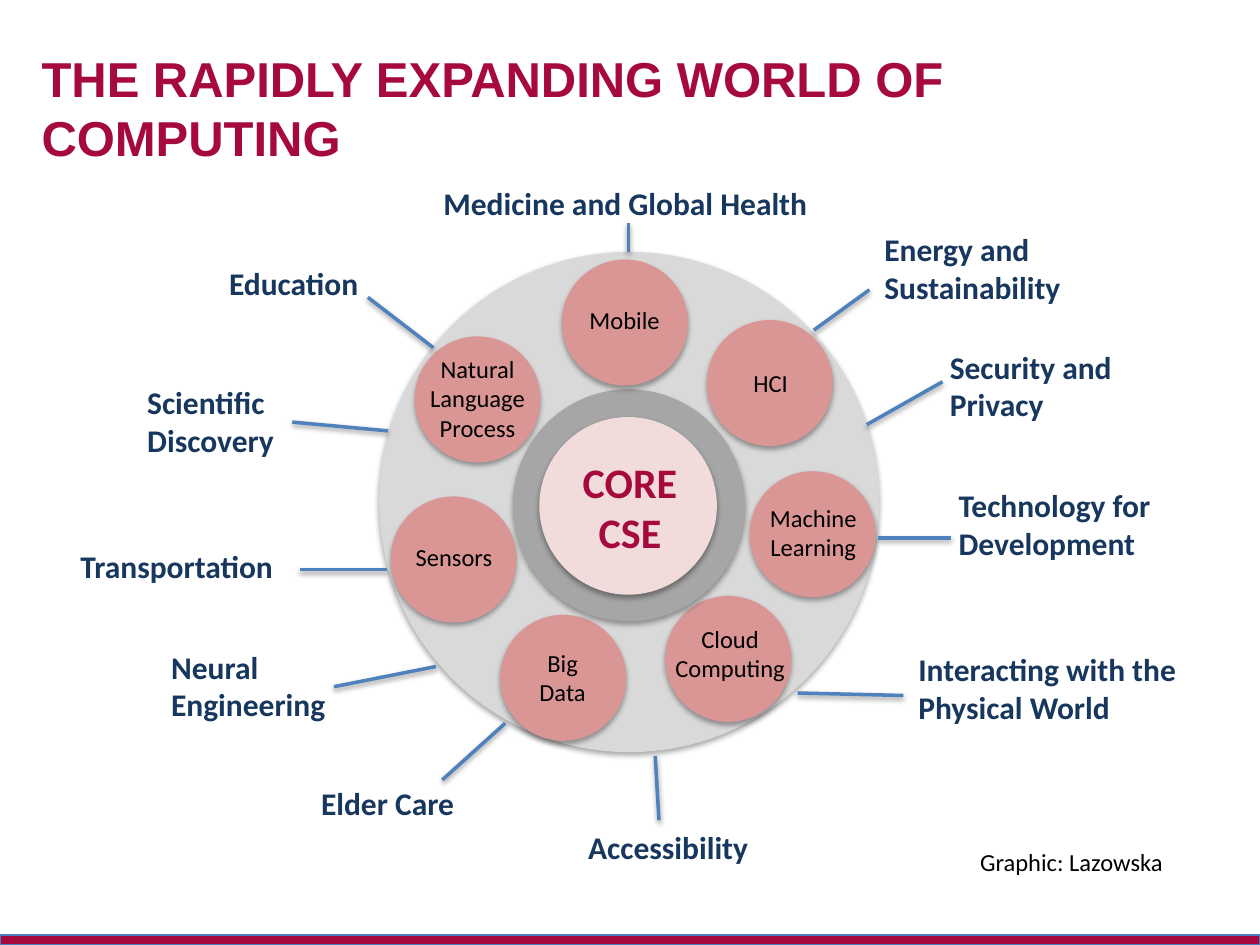
from typing import NamedTuple

from lxml.etree import SubElement
from pptx import Presentation
from pptx.dml.color import RGBColor
from pptx.enum.shapes import MSO_CONNECTOR, MSO_SHAPE
from pptx.enum.text import MSO_ANCHOR, MSO_AUTO_SIZE, PP_ALIGN
from pptx.oxml.ns import qn
from pptx.util import Pt

SCALE = 9144
CRIMSON, NAVY, BLACK = "A6093D", "17375E", "000000"
ROSE, BLUE = "D99694", "4F81BD"
LEFT, MID = PP_ALIGN.LEFT, PP_ALIGN.CENTER


class Disc(NamedTuple):
    x: int
    y: int
    size: int = 100
    fill: str = ROSE


class Style(NamedTuple):
    size: int
    color: str
    bold: bool = False
    font: str = "Calibri"


class Note(NamedTuple):
    x: int
    y: int
    w: int
    h: int
    text: str
    align: PP_ALIGN = LEFT
    wrap: bool = True


class Spoke(NamedTuple):
    x1: int
    y1: int
    x2: int
    y2: int


HEAD = Style(28, CRIMSON, True, "Arial")
CORE = Style(24, CRIMSON, True)
FIELD = Style(18, NAVY, True)
TOPIC = Style(14, BLACK)

DISCS = [
    Disc(301, 200, 397, "D9D9D9"),
    Disc(561, 254),
    Disc(595, 374),
    Disc(528, 473),
    Disc(329, 267),
    Disc(310, 394),
    Disc(397, 488),
    Disc(407, 309, 184, "A6A6A6"),
    Disc(428, 331, 141, "F2DCDB"),
    Disc(446, 206),
]

NOTES = {
    CORE: [Note(443, 357, 114, 91, "CORE\nCSE", MID)],
    TOPIC: [
        Note(768, 667, 168, 34, "Graphic: Lazowska", wrap=False),
        Note(458, 237, 81, 34, "Mobile"),
        Note(588, 287, 81, 34, "HCI"),
        Note(594, 394, 103, 57, "Machine Learning", MID),
        Note(521, 490, 117, 57, "Cloud\nComputing", MID),
        Note(406, 509, 81, 57, "Big Data", MID),
        Note(328, 276, 102, 81, "Natural Language Process", MID),
        Note(320, 425, 81, 34, "Sensors"),
    ],
    FIELD: [
        Note(342, 141, 341, 40, "Medicine and Global Health"),
        Note(692, 178, 166, 71, "Energy and\nSustainability"),
        Note(744, 271, 166, 71, "Security and\nPrivacy"),
        Note(751, 381, 197, 71, "Technology for\nDevelopment"),
        Note(719, 511, 247, 71, "Interacting with the Physical World"),
        Note(457, 652, 166, 40, "Accessibility"),
        Note(245, 617, 166, 40, "Elder Care"),
        Note(126, 509, 166, 71, "Neural\nEngineering"),
        Note(54, 429, 177, 40, "Transportation"),
        Note(107, 299, 132, 71, "Scientific Discovery"),
        Note(172, 205, 170, 40, "Education"),
    ],
}

SPOKES = [
    Spoke(292, 236, 344, 276),
    Spoke(308, 342, 232, 335),
    Spoke(307, 452, 238, 452),
    Spoke(346, 529, 265, 545),
    Spoke(401, 574, 351, 619),
    Spoke(520, 600, 523, 651),
    Spoke(633, 550, 717, 552),
    Spoke(697, 427, 755, 427),
    Spoke(688, 337, 748, 303),
    Spoke(646, 262, 690, 230),
    Spoke(499, 200, 499, 177),
]


def px(*vals: int) -> list[int]:
    return [val * SCALE for val in vals]


def rgb(code: str) -> RGBColor:
    return RGBColor.from_string(code)


def shade(shape, alpha: int, dist: float) -> None:
    group = SubElement(shape._element.spPr, qn("a:effectLst"))
    outer = SubElement(group, qn("a:outerShdw"), blurRad=str(Pt(3.1)),
                       dist=str(Pt(dist)), dir="5400000", rotWithShape="0")
    color = SubElement(outer, qn("a:srgbClr"), val=BLACK)
    SubElement(color, qn("a:alpha"), val=str(alpha * 1000))


def write(frame, text: str, style: Style, align: PP_ALIGN) -> None:
    frame.text = text
    for para in frame.paragraphs:
        para.alignment = align
        for run in para.runs:
            font = run.font
            font.name, font.size, font.bold = style.font, Pt(style.size), style.bold
            font.color.rgb = rgb(style.color)


def add_disc(slide, disc: Disc) -> None:
    shape = slide.shapes.add_shape(
        MSO_SHAPE.OVAL, *px(disc.x, disc.y, disc.size, disc.size))
    shape.fill.solid()
    shape.fill.fore_color.rgb = rgb(disc.fill)
    shape.line.fill.background()
    shade(shape, 35, 1.8)


def add_note(slide, note: Note, style: Style) -> None:
    frame = slide.shapes.add_textbox(
        *px(note.x, note.y, note.w, note.h)).text_frame
    frame.word_wrap = note.wrap
    frame.auto_size = MSO_AUTO_SIZE.SHAPE_TO_FIT_TEXT
    write(frame, note.text, style, note.align)


def add_spoke(slide, spoke: Spoke) -> None:
    line = slide.shapes.add_connector(MSO_CONNECTOR.STRAIGHT, *px(*spoke))
    line.line.color.rgb = rgb(BLUE)
    line.line.width = Pt(2)
    shade(line, 38, 1.6)


def add_bar(slide) -> None:
    bar = slide.shapes.add_shape(MSO_SHAPE.RECTANGLE, *px(0, 742, 1000, 8))
    bar.shadow.inherit = False
    bar.fill.solid()
    bar.fill.fore_color.rgb = rgb(CRIMSON)
    bar.line.color.rgb = rgb("4B7EBC")
    bar.line.width = Pt(0.75)


def add_title(slide) -> None:
    title = slide.shapes.title
    title.left, title.top, title.width, title.height = px(23, 30, 955, 110)
    title.text_frame.vertical_anchor = MSO_ANCHOR.MIDDLE
    write(title.text_frame, "THE RAPIDLY EXPANDING WORLD OF COMPUTING", HEAD, LEFT)


def main() -> None:
    deck = Presentation()
    deck.slide_width, deck.slide_height = px(1000, 750)
    slide = deck.slides.add_slide(deck.slide_layouts[5])
    add_title(slide)
    add_bar(slide)
    for disc in DISCS:
        add_disc(slide, disc)
    for style, notes in NOTES.items():
        for note in notes:
            add_note(slide, note, style)
    for spoke in SPOKES:
        add_spoke(slide, spoke)
    deck.save("out.pptx")


if __name__ == "__main__":
    main()
